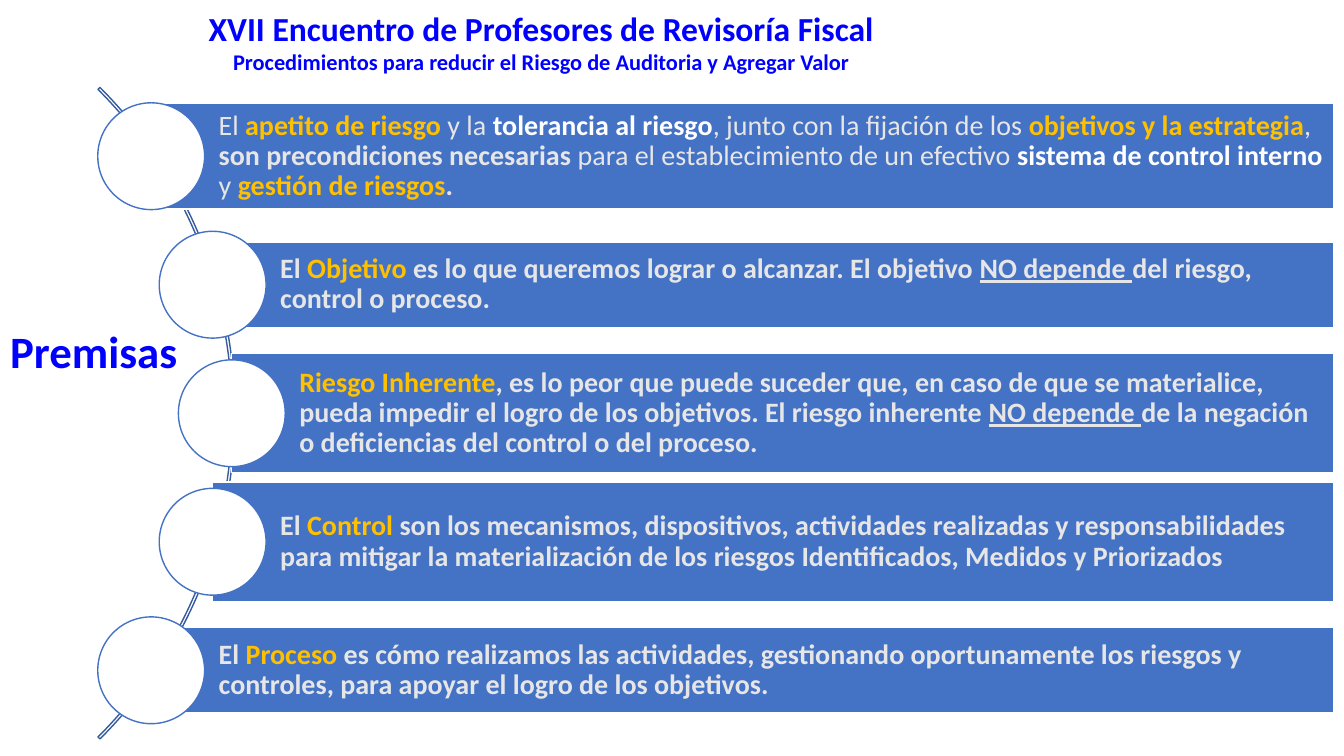
from dataclasses import dataclass

from pptx import Presentation
from pptx.dml.color import RGBColor
from pptx.enum.shapes import MSO_SHAPE
from pptx.enum.text import MSO_ANCHOR, MSO_AUTO_SIZE, PP_ALIGN
from pptx.shapes.autoshape import Shape
from pptx.slide import Slide
from pptx.util import Inches, Pt

COLORS = {
    "heading": "0000FF",
    "bar": "4472C4",
    "arc": "365B9D",
    "white": "FFFFFF",
    "light": "E7E6E6",
    "gold": "FFC000",
}
FONT = "Calibri"
CELL = Inches(0.1)
COLUMNS, ROWS = 133.33, 75
BAR_RIGHT = 132.3
CIRCLE_SIZE = 10.6
ARC_SIZE = 91.4
MIDDLE_ROW = 41
ROW_STEP = 12.75


@dataclass(frozen=True)
class Span:
    text: str
    color: str = "light"
    bold: bool = True
    underline: bool = False


@dataclass(frozen=True)
class Premise:
    column: float
    height: float
    spans: tuple[Span, ...]


PREMISES = (
    Premise(15, 10.5, (
        Span("El ", bold=False),
        Span("apetito de riesgo ", "gold"),
        Span("y la ", bold=False),
        Span("tolerancia al riesgo", "white"),
        Span(", junto con la fijación de los ", bold=False),
        Span("objetivos y la estrategia", "gold"),
        Span(", ", bold=False),
        Span("son precondiciones necesarias "),
        Span("para el establecimiento de un efectivo ", bold=False),
        Span("sistema de control interno ", "white"),
        Span("y ", bold=False),
        Span("gestión de riesgos", "gold"),
        Span("."),
    )),
    Premise(21.1, 8.5, (
        Span("El "),
        Span("Objetivo", "gold"),
        Span(" es lo que queremos lograr o alcanzar. El objetivo "),
        Span("NO depende ", underline=True),
        Span("del riesgo, control o proceso."),
    )),
    Premise(23, 11.8, (
        Span("Riesgo Inherente", "gold"),
        Span(", es lo peor que puede suceder que, en caso de que se materialice, "
             "pueda impedir el logro de los objetivos. El riesgo inherente "),
        Span("NO depende ", underline=True),
        Span("de la negación o deficiencias del control o del proceso."),
    )),
    Premise(21.1, 11.9, (
        Span("El "),
        Span("Control ", "gold"),
        Span("son los mecanismos, dispositivos, actividades realizadas y "
             "responsabilidades para mitigar la materialización de los riesgos "
             "Identificados, Medidos y Priorizados"),
    )),
    Premise(15, 8.5, (
        Span("El "),
        Span("Proceso", "gold"),
        Span(" es cómo realizamos las actividades, gestionando oportunamente "
             "los riesgos y controles, para apoyar el logro de los objetivos."),
    )),
)


def cells(*counts: float) -> list[int]:
    return [round(count * CELL) for count in counts]


def add_span(para, text: str, *, size: float, color: str,
             bold: bool = True, underline: bool = False) -> None:
    font = para.add_run().font
    para.runs[-1].text = text
    font.name = FONT
    font.size = Pt(size)
    font.bold = bold
    font.underline = underline
    font.color.rgb = RGBColor.from_string(COLORS[color])


def add_outlined(slide: Slide, kind: MSO_SHAPE, left: float, top: float,
                 width: float, height: float, *, line: str,
                 fill: str | None = None) -> Shape:
    shape = slide.shapes.add_shape(kind, *cells(left, top, width, height))
    shape.shadow.inherit = False
    if fill is None:
        shape.fill.background()
    else:
        shape.fill.solid()
        shape.fill.fore_color.rgb = RGBColor.from_string(COLORS[fill])
    shape.line.color.rgb = RGBColor.from_string(COLORS[line])
    shape.line.width = Pt(1)
    return shape


def add_heading(slide: Slide) -> None:
    title = slide.shapes.title
    title.left, title.top, title.width, title.height = cells(19.4, 0.3, 68.6, 7.7)
    frame = title.text_frame
    frame.auto_size = MSO_AUTO_SIZE.NONE
    frame.vertical_anchor = MSO_ANCHOR.TOP
    lines = (
        ("XVII Encuentro de Profesores de Revisoría Fiscal", 24),
        ("Procedimientos para reducir el Riesgo de Auditoria y Agregar Valor", 16),
    )
    for index, (text, size) in enumerate(lines):
        para = frame.add_paragraph() if index else frame.paragraphs[0]
        para.alignment = PP_ALIGN.CENTER
        add_span(para, text, size=size, color="heading")


def add_side_label(slide: Slide) -> None:
    box = slide.shapes.add_textbox(*cells(0, 31.6, 18.6, 6.4))
    box.text_frame.word_wrap = False
    para = box.text_frame.paragraphs[0]
    para.alignment = PP_ALIGN.CENTER
    add_span(para, "Premisas", size=32, color="heading")


def add_arc(slide: Slide) -> None:
    arc = add_outlined(slide, MSO_SHAPE.BLOCK_ARC, -68.1, MIDDLE_ROW - ARC_SIZE / 2,
                       ARC_SIZE, ARC_SIZE, line="arc")
    for index, value in enumerate((189, 27, 0.003)):
        arc.adjustments[index] = value


def add_premise(slide: Slide, premise: Premise, center: float) -> None:
    bar = add_outlined(slide, MSO_SHAPE.RECTANGLE, premise.column,
                       center - premise.height / 2, BAR_RIGHT - premise.column,
                       premise.height, line="white", fill="bar")
    frame = bar.text_frame
    frame.word_wrap = True
    frame.vertical_anchor = MSO_ANCHOR.MIDDLE
    frame.margin_left = Inches(0.67)
    frame.margin_top = frame.margin_right = frame.margin_bottom = Inches(0.06)
    para = frame.paragraphs[0]
    para.alignment = PP_ALIGN.LEFT
    para.line_spacing = 0.9
    for span in premise.spans:
        add_span(para, span.text, size=20, color=span.color,
                 bold=span.bold, underline=span.underline)
    add_outlined(slide, MSO_SHAPE.OVAL, premise.column - CIRCLE_SIZE / 2,
                 center - CIRCLE_SIZE / 2, CIRCLE_SIZE, CIRCLE_SIZE,
                 line="bar", fill="white")


def main() -> None:
    deck = Presentation()
    deck.slide_width, deck.slide_height = cells(COLUMNS, ROWS)
    page = deck.slides.add_slide(deck.slide_layouts[5])
    add_heading(page)
    add_side_label(page)
    add_arc(page)
    for index, premise in enumerate(PREMISES):
        add_premise(page, premise, MIDDLE_ROW + (index - 2) * ROW_STEP)
    deck.save("out.pptx")


if __name__ == "__main__":
    main()
